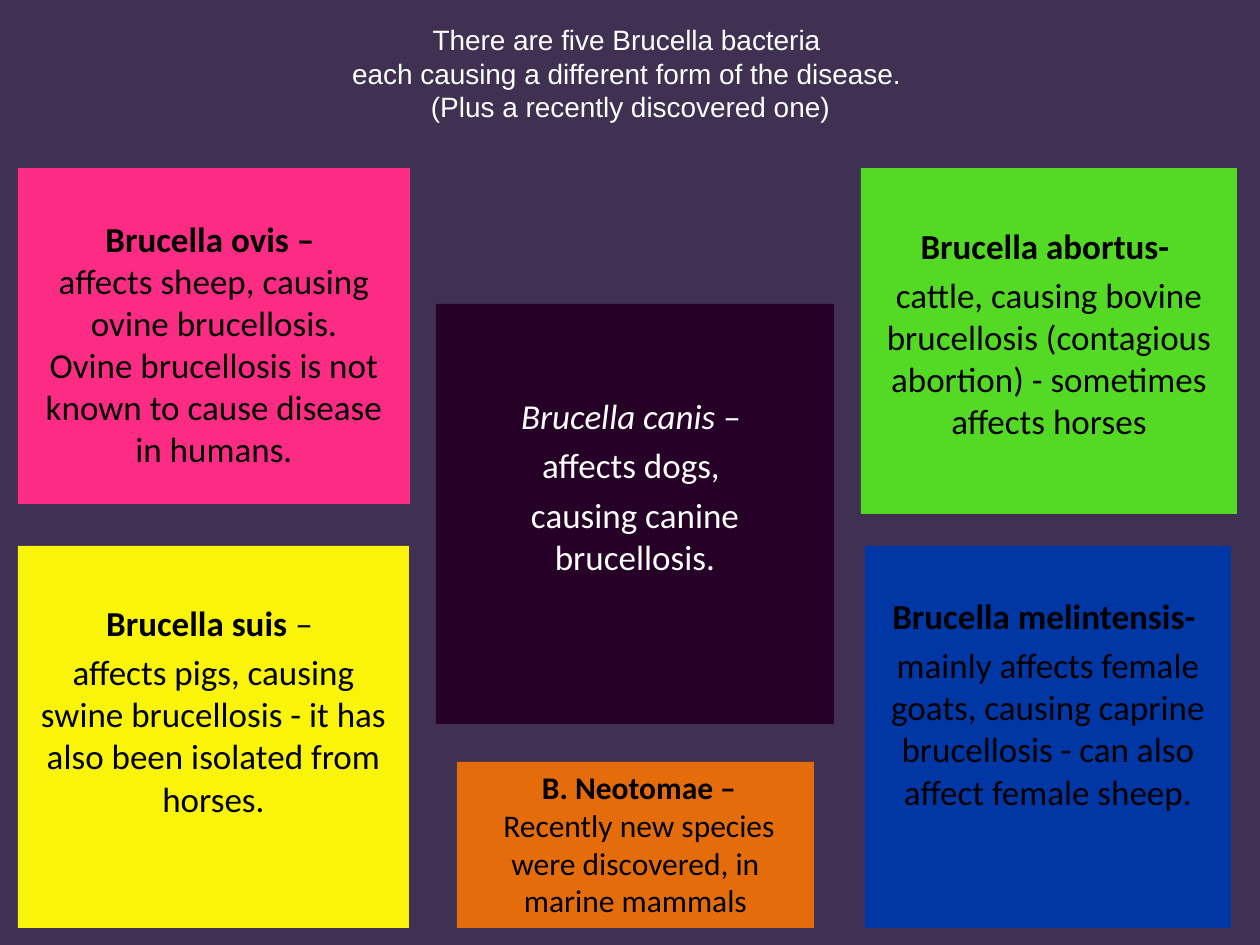
import pptx
import pptx.util
from pptx.dml.color import RGBColor
from pptx.enum.shapes import MSO_SHAPE
from pptx.enum.text import MSO_ANCHOR, MSO_AUTO_SIZE, PP_ALIGN
from pptx.oxml.ns import qn

PX = 914400 // 126

COLORS = {
    "background": "403152", "white": "FFFFFF", "black": "000000",
    "green": "54D925", "blue": "0037A4", "pink": "FC2C85",
    "yellow": "FAF40A", "purple": "260026", "orange": "E46C0A",
}

# Content: paragraphs are lists of (text, style) runs
HEADING = ("There are five Brucella bacteria \n"
           "each causing a different form of the disease. \n"
           "(Plus a recently discovered one)")
HEADING_BOX = (32, 10, 1197, 126)

# The first species fills the body placeholder
SPECIES = [
    {"box": (861, 168, 376, 346), "fill": "green", "top": 56, "paragraphs": [
        [("Brucella abortus- ", "bold")],
        [("cattle, causing bovine brucellosis (contagious abortion) - "
          "sometimes affects horses", "")]]},
    {"box": (865, 546, 366, 382), "fill": "blue", "top": 49, "paragraphs": [
        [("Brucella melintensis- ", "bold")],
        [("mainly affects female goats, causing caprine brucellosis - "
          "can also affect female sheep.", "")]]},
    {"box": (18, 168, 392, 336), "fill": "pink", "top": 49, "paragraphs": [
        [("Brucella ovis – \n", "bold"),
         ("affects sheep, causing ovine brucellosis.\nOvine brucellosis is "
          "not known to cause disease in humans.", "")]]},
    {"box": (18, 546, 391, 382), "fill": "yellow", "top": 56, "paragraphs": [
        [("Brucella suis ", "bold"), ("– ", "")],
        [("affects pigs, causing swine brucellosis - it has also been "
          "isolated from horses.", "")]]},
    {"box": (436, 304, 398, 420), "fill": "purple", "top": 91,
     "ink": "white", "paragraphs": [
        [("Brucella canis ", "italic"), ("– ", "")],
        [("affects dogs, ", "")],
        [("causing canine brucellosis.", "")]]},
    {"box": (457, 762, 357, 166), "fill": "orange", "top": 6, "size": 18,
     "paragraphs": [
        [(" ", ""), ("B. Neotomae –\n ", "bold"),
         ("Recently new species were discovered, in marine mammals", "")]]},
]


def color(name):
    return RGBColor.from_string(COLORS[name])


def place(shape, box):
    shape.left, shape.top, shape.width, shape.height = (n * PX for n in box)


def style_font(font, name, size, ink):
    font.name = name
    font.size = pptx.util.Pt(size)
    font.color.rgb = color(ink)


def add_runs(paragraph, text, style, size, ink):
    for number, line in enumerate(text.split("\n")):
        if number:
            paragraph.add_line_break()
        if line:
            run = paragraph.add_run()
            run.text = line
            style_font(run.font, "Calibri", size, ink)
            run.font.bold = style == "bold"
            run.font.italic = style == "italic"


def fill_panel(panel, species):
    place(panel, species["box"])
    panel.fill.solid()
    panel.fill.fore_color.rgb = color(species["fill"])
    frame = panel.text_frame
    frame.word_wrap = True
    frame.auto_size = MSO_AUTO_SIZE.NONE
    frame.vertical_anchor = MSO_ANCHOR.TOP
    frame.margin_top = species["top"] * PX
    for number, runs in enumerate(species["paragraphs"]):
        paragraph = frame.add_paragraph() if number else frame.paragraphs[0]
        paragraph.alignment = PP_ALIGN.CENTER
        paragraph.space_before = pptx.util.Pt(4 if number else 0)
        for text, style in runs:
            add_runs(paragraph, text, style, species.get("size", 20),
                     species.get("ink", "black"))


def main():
    deck = pptx.Presentation()
    deck.slide_width, deck.slide_height = 1260 * PX, 945 * PX
    slide = deck.slides.add_slide(deck.slide_layouts[1])
    slide.background.fill.solid()
    slide.background.fill.fore_color.rgb = color("background")

    # Heading
    heading = slide.shapes.title
    place(heading, HEADING_BOX)
    heading.text_frame.paragraphs[0].text = HEADING.replace("\n", "\v")
    heading.text_frame.auto_size = MSO_AUTO_SIZE.NONE
    heading.text_frame.vertical_anchor = MSO_ANCHOR.MIDDLE
    for paragraph in heading.text_frame.paragraphs:
        paragraph.alignment = PP_ALIGN.CENTER
        for run in paragraph.runs:
            style_font(run.font, "Arial", 16, "white")

    # Body placeholder, without bullets
    body = slide.placeholders[1]
    fill_panel(body, SPECIES[0])
    for paragraph in body.text_frame.paragraphs:
        properties = paragraph._p.get_or_add_pPr()
        properties.set("marL", "0")
        properties.set("indent", "0")
        properties.append(properties.makeelement(qn("a:buNone"), {}))

    # Other species panels
    for species in SPECIES[1:]:
        panel = slide.shapes.add_shape(MSO_SHAPE.RECTANGLE, 0, 0, PX, PX)
        panel.shadow.inherit = False
        panel.line.fill.background()
        fill_panel(panel, species)

    deck.save("out.pptx")


if __name__ == "__main__":
    main()
